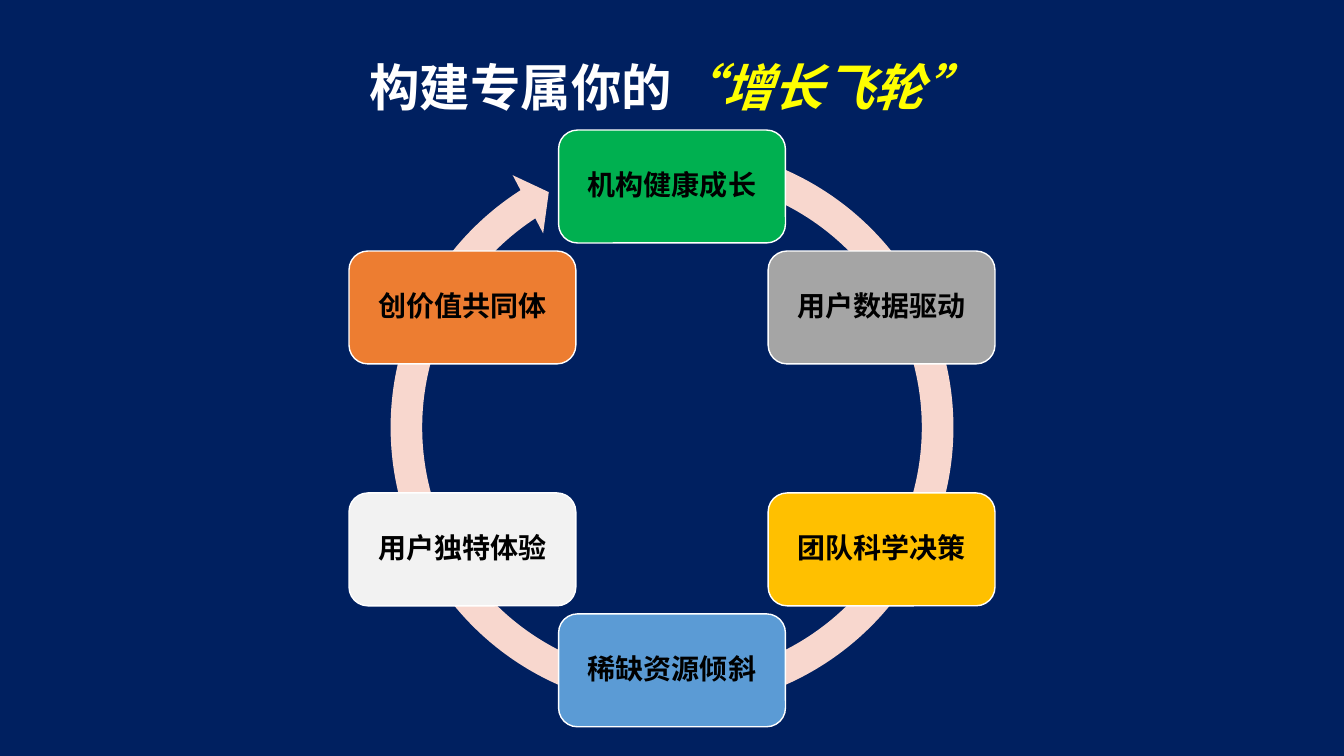
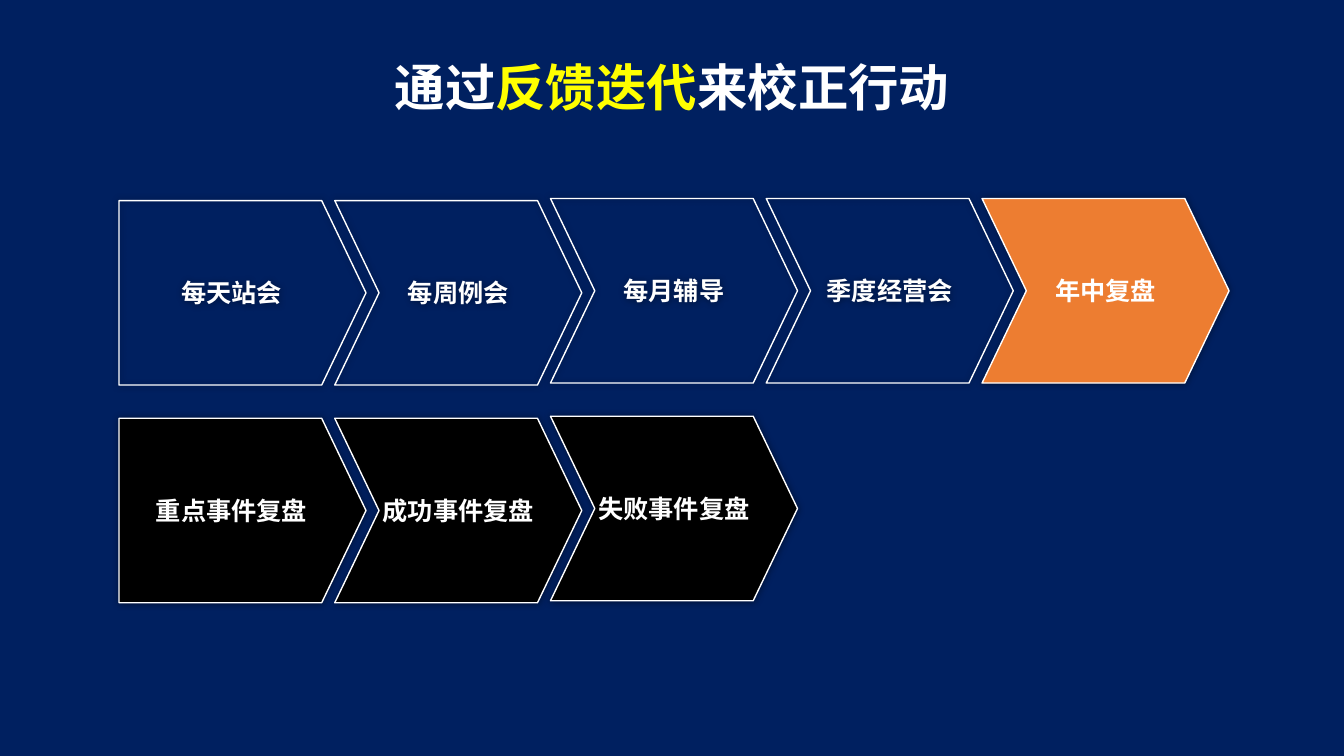
import math

from lxml import etree
from pptx import Presentation
from pptx import util as u
from pptx.dml.color import RGBColor
from pptx.enum import shapes, text
from pptx.oxml.ns import qn

SLIDE_W, SLIDE_H = 13.33, 7.5
NAVY, WHITE, BLACK = "002060", "FFFFFF", "000000"
YELLOW, ORANGE, PEACH = "FFFF00", "ED7D31", "F8D7CE"
CJK, LATIN = "Noto Sans CJK SC", "Montserrat"

# Flywheel: a hexagon of boxes around the slide's centre line
WHEEL_X, WHEEL_Y, WHEEL_R = SLIDE_W / 2, 4.25, 2.4
BOX_W, BOX_H = 2.25, 1.12
RING = 5.92

# Review steps: columns and rows of interlocking arrows
STEP_W, STEP_H = 2.45, 1.83
STEP_LEFT, STEP_TOP = 1.18, 1.99
COL_PITCH, ROW_PITCH = 2.14, 2.16
LIFT = 0.02  # steps from the third column on sit slightly higher


def color(hex_value):
    return RGBColor.from_string(hex_value)


def inches(*lengths):
    return [u.Inches(length) for length in lengths]


def add_run(paragraph, words, size, hex_value, font=CJK, italic=False):
    run = paragraph.add_run()
    run.text = words
    run.font.size = u.Pt(size)
    run.font.bold = True
    run.font.italic = italic
    run.font.color.rgb = color(hex_value)
    run.font.name = font
    east_asian = etree.SubElement(run.font._element, qn("a:ea"))
    east_asian.set("typeface", CJK)


def add_figure(parent, preset, place, fill=None, line=None, adjustments=()):
    figure = parent.shapes.add_shape(preset, *inches(*place))
    for index, value in enumerate(adjustments):
        figure.adjustments[index] = value
    if fill:
        figure.fill.solid()
        figure.fill.fore_color.rgb = color(fill)
    else:
        figure.fill.background()
    if line:
        figure.line.color.rgb = color(line)
        figure.line.width = u.Pt(1)
    else:
        figure.line.fill.background()
    figure.shadow.inherit = False
    return figure


def add_label(figure, words, size, hex_value, inset, spacing=None):
    frame = figure.text_frame
    frame.word_wrap = True
    frame.vertical_anchor = text.MSO_ANCHOR.MIDDLE
    frame.margin_left = frame.margin_right = u.Inches(inset)
    frame.margin_top = frame.margin_bottom = u.Inches(inset)
    paragraph = frame.paragraphs[0]
    paragraph.alignment = text.PP_ALIGN.CENTER
    if spacing:
        paragraph.line_spacing = spacing
    add_run(paragraph, words, size, hex_value)


def add_soft_shadow(figure):
    effects = figure._element.spPr.find(qn("a:effectLst"))
    shadow = etree.SubElement(effects, qn("a:outerShdw"), blurRad=str(u.Pt(5)),
                              dist="0", dir="0", algn="ctr", rotWithShape="0")
    tint = etree.SubElement(shadow, qn("a:srgbClr"), val=BLACK)
    etree.SubElement(tint, qn("a:alpha"), val="40000")


def set_up_theme(prs):
    """Shared background and title position; returns the layout in use."""
    prs.slide_width, prs.slide_height = inches(SLIDE_W, SLIDE_H)
    background = prs.slide_master.background.fill
    background.solid()
    background.fore_color.rgb = color(NAVY)
    layout = prs.slide_layouts[5]
    heading = layout.placeholders[0]
    heading.left, heading.top, heading.width, heading.height = inches(
        1.87, 0.5, SLIDE_W - 2 * 1.87, 0.71)
    return layout


def add_titled_slide(prs, layout, runs):
    slide = prs.slides.add_slide(layout)
    frame = slide.shapes.title.text_frame
    frame.auto_size = text.MSO_AUTO_SIZE.NONE
    frame.vertical_anchor = text.MSO_ANCHOR.MIDDLE
    heading = frame.paragraphs[0]
    heading.alignment = text.PP_ALIGN.CENTER
    for words, hex_value, font, italic in runs:
        add_run(heading, words, 36, hex_value, font, italic)
    return slide


def add_flywheel(slide, stages):
    # Ring with its arrowhead just before the top box
    add_figure(slide, shapes.MSO_SHAPE.CIRCULAR_ARROW,
               (WHEEL_X - RING / 2, 1.28, RING, RING), PEACH,
               adjustments=(0.053, 3.126, 142.291, 171.264, 0.055))
    # Boxes clockwise from the top
    for index, (words, fill) in enumerate(stages):
        angle = index * math.tau / len(stages)
        left = WHEEL_X + WHEEL_R * math.sin(angle) - BOX_W / 2
        top = WHEEL_Y - WHEEL_R * math.cos(angle) - BOX_H / 2
        box = add_figure(slide, shapes.MSO_SHAPE.ROUNDED_RECTANGLE,
                         (left, top, BOX_W, BOX_H), fill, WHITE, (0.167,))
        add_label(box, words, 20, BLACK, 0.14, 0.9)


def add_step_row(slide, row, steps):
    group = slide.shapes.add_group_shape()
    for column, (words, fill) in enumerate(steps):
        preset = shapes.MSO_SHAPE.CHEVRON if column else shapes.MSO_SHAPE.PENTAGON
        top = STEP_TOP + row * ROW_PITCH - (LIFT if column >= 2 else 0)
        step = add_figure(group, preset,
                          (STEP_LEFT + column * COL_PITCH, top, STEP_W, STEP_H),
                          fill, WHITE, (0.24,))
        add_soft_shadow(step)
        add_label(step, words, 18, WHITE, 0)


def main():
    prs = Presentation()
    layout = set_up_theme(prs)

    # Growth flywheel
    flywheel = add_titled_slide(prs, layout, [
        ("构建专属你的", WHITE, LATIN, False),
        ("“", YELLOW, CJK, True),
        ("增长飞轮", YELLOW, LATIN, True),
        ("”", YELLOW, CJK, True),
    ])
    add_flywheel(flywheel, [
        ("机构健康成长", "00B050"),
        ("用户数据驱动", "A5A5A5"),
        ("团队科学决策", "FFC000"),
        ("稀缺资源倾斜", "5B9BD5"),
        ("用户独特体验", "F2F2F2"),
        ("创价值共同体", ORANGE),
    ])

    # Feedback and review rhythm
    feedback = add_titled_slide(prs, layout, [
        ("通过", WHITE, CJK, False),
        ("反馈迭代", YELLOW, CJK, False),
        ("来校正行动", WHITE, CJK, False),
    ])
    add_step_row(feedback, 0, [
        ("每天站会", None), ("每周例会", None), ("每月辅导", None),
        ("季度经营会", None), ("年中复盘", ORANGE),
    ])
    add_step_row(feedback, 1, [
        ("重点事件复盘", BLACK), ("成功事件复盘", BLACK), ("失败事件复盘", BLACK),
    ])

    prs.save("out.pptx")


if __name__ == "__main__":
    main()
